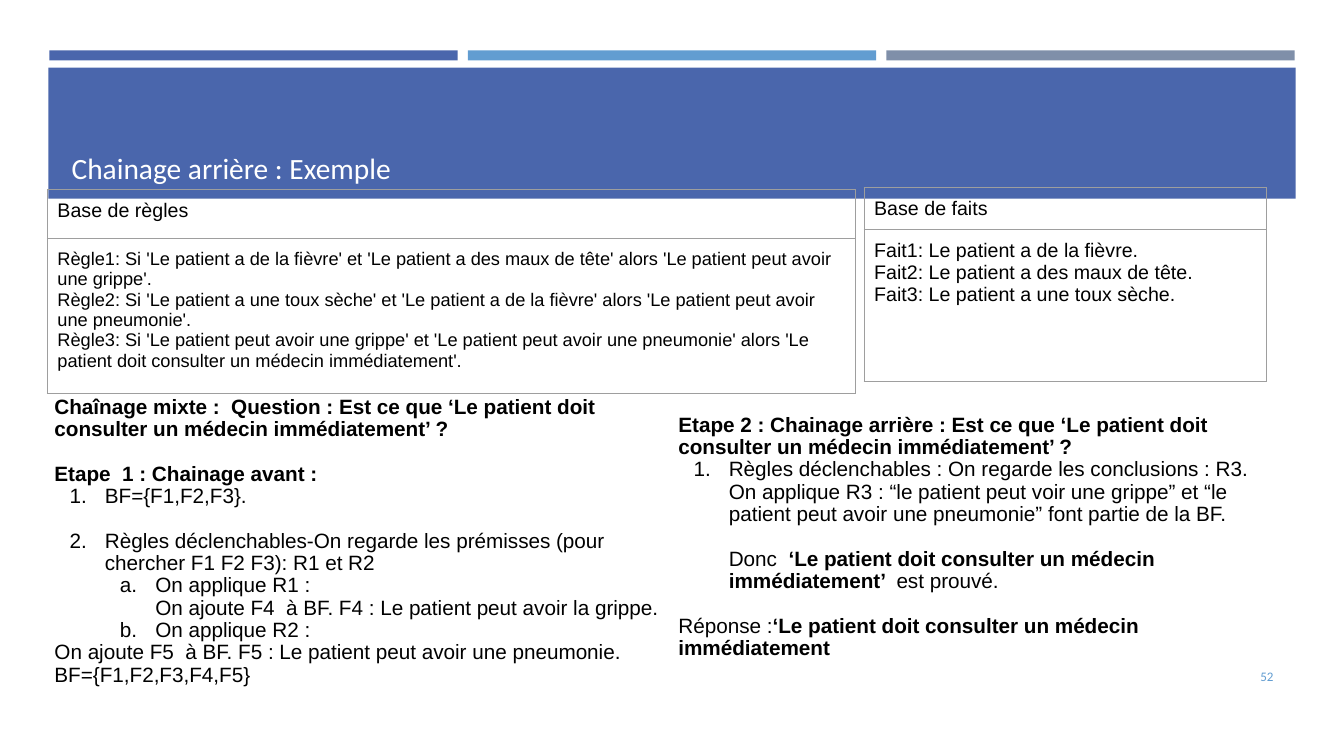
from dataclasses import dataclass

from lxml.etree import SubElement
from pptx import Presentation
from pptx.dml.color import RGBColor
from pptx.enum.shapes import MSO_SHAPE
from pptx.enum.text import MSO_ANCHOR, MSO_AUTO_SIZE, PP_ALIGN
from pptx.oxml.ns import qn
from pptx.util import Inches, Pt


@dataclass(frozen=True)
class Theme:
    blue: str = "4A66AC"
    sky: str = "629DD1"
    slate: str = "7F8FA9"
    white: str = "FFFFFF"
    black: str = "000000"
    border: str = "9E9E9E"
    heading_font: str = "Calibri"
    body_font: str = "Arial"
    title_size: float = 21
    body_size: float = 14.8
    table_size: float = 14
    rules_size: float = 13
    number_size: float = 9.3


theme = Theme()

# Content
TITLE = "Chainage arrière : Exemple"
SLIDE_NUMBER = "52"

# Tables: left, top, width, row heights, header, lines, size of the lines
TABLES = [
    (8.57, 1.86, 3.99, (0.42, 1.5), "Base de faits", [
        "Fait1: Le patient a de la fièvre.",
        "Fait2: Le patient a des maux de tête.",
        "Fait3: Le patient a une toux sèche.",
    ], theme.table_size),
    (0.47, 1.88, 8.01, (0.49, 1.53), "Base de règles", [
        "Règle1: Si 'Le patient a de la fièvre' et 'Le patient a des maux de tête' "
        "alors 'Le patient peut avoir une grippe'.",
        "Règle2: Si 'Le patient a une toux sèche' et 'Le patient a de la fièvre' "
        "alors 'Le patient peut avoir une pneumonie'.",
        "Règle3: Si 'Le patient peut avoir une grippe' et 'Le patient peut avoir une "
        "pneumonie' alors 'Le patient doit consulter un médecin immédiatement'.",
    ], theme.rules_size),
]

# Paragraphs: runs (text, bold), indent level, (numbering, start) or None, gap before
NUMBER, LETTER = "arabicPeriod", "alphaLcPeriod"
FORWARD_STEPS = [
    ([("Chaînage mixte :  Question : Est ce que ‘Le patient doit consulter "
       "un médecin immédiatement’ ?", True)], 0, None, False),
    ([("Etape  1 : Chainage avant :", True)], 0, None, True),
    ([("BF={F1,F2,F3}.", False)], 1, (NUMBER, 1), False),
    ([("Règles déclenchables-On regarde les prémisses (pour chercher F1 F2 F3): "
       "R1 et R2", False)], 1, (NUMBER, 2), True),
    ([("On applique R1 :", False)], 2, (LETTER, 1), False),
    ([("On ajoute F4  à BF. F4 : Le patient peut avoir la grippe.", False)],
     2, None, False),
    ([("On applique R2 :", False)], 2, (LETTER, 2), False),
    ([("On ajoute F5  à BF. F5 : Le patient peut avoir une pneumonie.", False)],
     0, None, False),
    ([("BF={F1,F2,F3,F4,F5}", False)], 0, None, False),
]
BACKWARD_STEPS = [
    ([("Etape 2 : Chainage arrière : Est ce que ‘Le patient doit consulter "
       "un médecin immédiatement’ ?", True)], 0, None, False),
    ([("Règles déclenchables : On regarde les conclusions : R3.", False)],
     1, (NUMBER, 1), False),
    ([("On applique R3 : “le patient peut voir une grippe” et “le patient peut "
       "avoir une pneumonie” font partie de la BF.", False)], 1, None, False),
    ([("Donc  ", False),
      ("‘Le patient doit consulter un médecin immédiatement’  ", True),
      ("est prouvé.", False)], 1, None, True),
    ([("Réponse :", False),
      ("‘Le patient doit consulter un médecin immédiatement", True)],
     0, None, True),
]

LEVEL_INDENT, HANGING = 0.5, 0.35
LINE_SPACING, GAP = 0.9, 16


def style_font(font, size, color=theme.black, name=theme.body_font, bold=False):
    font.size, font.name, font.bold = Pt(size), name, bold
    font.color.rgb = RGBColor.from_string(color)


def place(shape, left, top, width, height):
    shape.left, shape.top = Inches(left), Inches(top)
    shape.width, shape.height = Inches(width), Inches(height)


def set_frame(frame, anchor, side, edge):
    frame.word_wrap = True
    frame.auto_size = MSO_AUTO_SIZE.NONE
    frame.vertical_anchor = anchor
    frame.margin_left = frame.margin_right = Inches(side)
    frame.margin_top = frame.margin_bottom = Inches(edge)


def add_bar(slide, left, top, width, height, color):
    bar = slide.shapes.add_shape(MSO_SHAPE.RECTANGLE, Inches(left), Inches(top),
                                 Inches(width), Inches(height))
    bar.shadow.inherit = False
    bar.fill.solid()
    bar.fill.fore_color.rgb = RGBColor.from_string(color)
    bar.line.fill.background()


def write_steps(frame, steps):
    for index, (runs, level, numbering, gap) in enumerate(steps):
        paragraph = frame.paragraphs[0] if index == 0 else frame.add_paragraph()
        paragraph.line_spacing = LINE_SPACING
        paragraph.space_before = Pt(GAP if gap else 0)
        paragraph.space_after = Pt(0)
        paragraph.level = max(level - 1, 0)
        properties = paragraph._p.get_or_add_pPr()
        properties.set("marL", str(Inches(level * LEVEL_INDENT)))
        properties.set("indent", str(Inches(-HANGING if numbering else 0)))
        if numbering:
            kind, start = numbering
            SubElement(properties, qn("a:buAutoNum"), type=kind, startAt=str(start))
        else:
            SubElement(properties, qn("a:buNone"))
        for text, bold in runs:
            run = paragraph.add_run()
            run.text = text
            style_font(run.font, theme.body_size, bold=bold)


def border_cell(cell):
    properties = cell._tc.get_or_add_tcPr()
    for side in ("a:lnL", "a:lnR", "a:lnT", "a:lnB"):
        line = SubElement(properties, qn(side), w=str(Pt(0.75)))
        fill = SubElement(line, qn("a:solidFill"))
        SubElement(fill, qn("a:srgbClr"), val=theme.border)


def add_base_table(slide, left, top, width, heights, header, lines, size):
    table = slide.shapes.add_table(2, 1, Inches(left), Inches(top), Inches(width),
                                   Inches(sum(heights))).table
    table.first_row = table.horz_banding = False
    rows = [(header, theme.table_size), ("\n".join(lines), size)]
    for index, (text, text_size) in enumerate(rows):
        table.rows[index].height = Inches(heights[index])
        cell = table.cell(index, 0)
        cell.margin_left = cell.margin_right = Inches(0.1)
        cell.margin_top = cell.margin_bottom = Inches(0.1)
        cell.text_frame.text = text
        for paragraph in cell.text_frame.paragraphs:
            style_font(paragraph.runs[0].font, text_size)
        border_cell(cell)
        cell.fill.background()


def main():
    presentation = Presentation()
    presentation.slide_width, presentation.slide_height = Inches(13.33), Inches(7.5)
    slide = presentation.slides.add_slide(presentation.slide_layouts[1])
    title, body = slide.placeholders

    # Colour bars and title band, kept behind the placeholders
    for index, color in enumerate((theme.blue, theme.sky, theme.slate)):
        add_bar(slide, 0.49 + index * 4.15, 0.5, 4.05, 0.1, color)
    add_bar(slide, 0.48, 0.67, 12.37, 1.3, theme.blue)
    for placeholder in (title, body):
        slide.shapes._spTree.append(placeholder._element)

    # Title
    place(title, 0.64, 0.77, 12.06, 1.11)
    set_frame(title.text_frame, MSO_ANCHOR.BOTTOM, 0.07, 0.04)
    title.text_frame.text = TITLE
    heading = title.text_frame.paragraphs[0]
    heading.alignment = PP_ALIGN.LEFT
    style_font(heading.runs[0].font, theme.title_size, theme.white, theme.heading_font)

    # Facts and rules
    for base in TABLES:
        add_base_table(slide, *base)

    # Reasoning steps
    place(body, 0.47, 3.89, 6.18, 3.33)
    set_frame(body.text_frame, MSO_ANCHOR.TOP, 0.07, 0.04)
    write_steps(body.text_frame, FORWARD_STEPS)
    backward = slide.shapes.add_textbox(Inches(6.63), Inches(4.01),
                                        Inches(6.18), Inches(2.67))
    set_frame(backward.text_frame, MSO_ANCHOR.TOP, 0.1, 0.1)
    write_steps(backward.text_frame, BACKWARD_STEPS)

    # Slide number
    number = slide.shapes.add_textbox(Inches(11.55), Inches(6.51),
                                      Inches(1.15), Inches(0.4))
    set_frame(number.text_frame, MSO_ANCHOR.MIDDLE, 0.07, 0.04)
    number.text_frame.text = SLIDE_NUMBER
    paragraph = number.text_frame.paragraphs[0]
    paragraph.alignment = PP_ALIGN.RIGHT
    style_font(paragraph.runs[0].font, theme.number_size, theme.sky, theme.heading_font)

    presentation.save("out.pptx")


if __name__ == "__main__":
    main()
